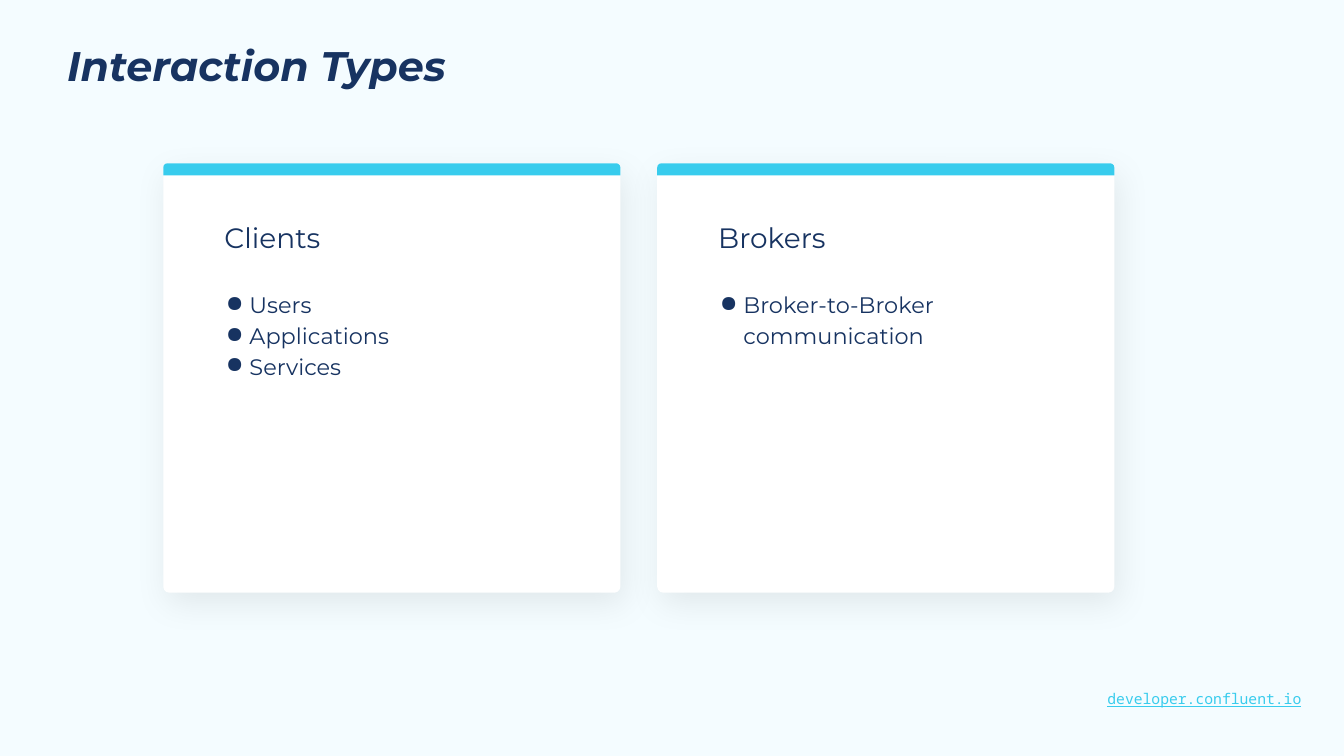
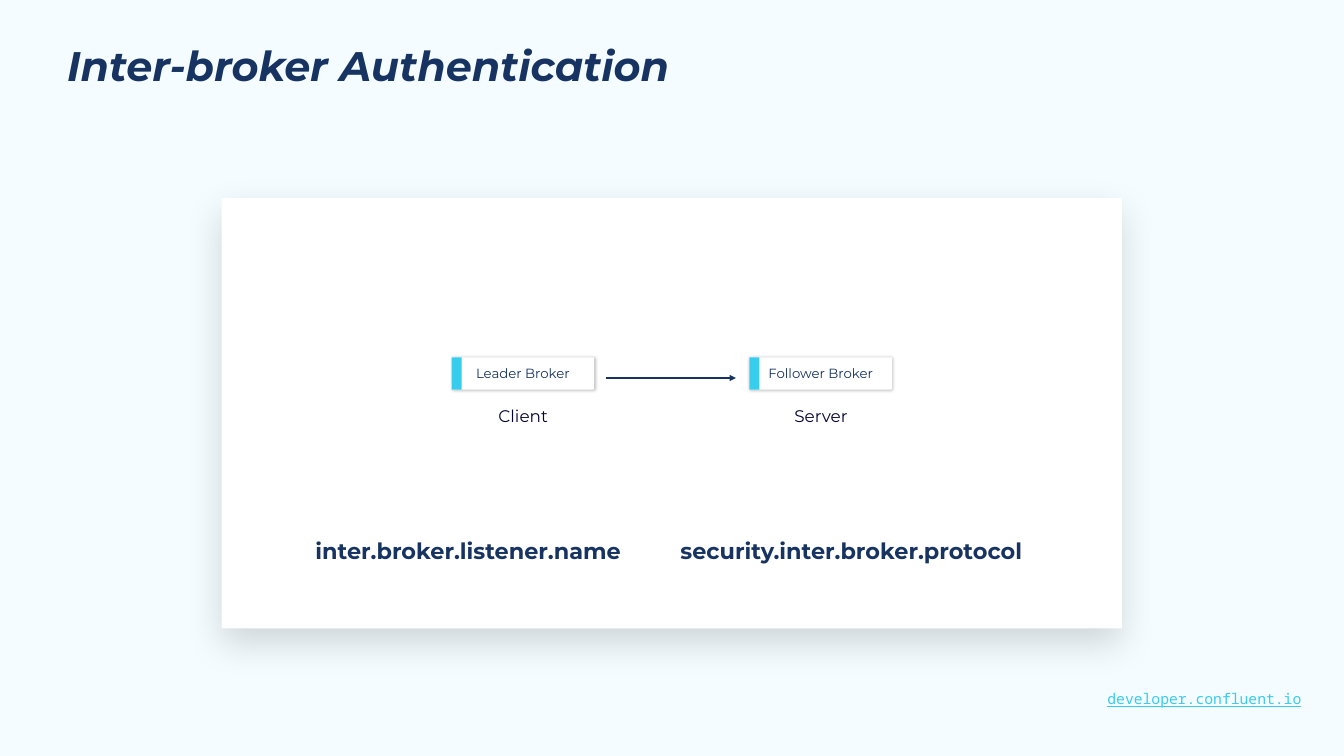
from dataclasses import dataclass
from typing import Any, NamedTuple

from lxml import etree
from pptx import Presentation
from pptx import util as u
from pptx.dml.color import RGBColor
from pptx.enum import shapes, text
from pptx.oxml import ns

# Shared look
NAVY = RGBColor(0x17, 0x33, 0x61)
INK = RGBColor(0x04, 0x05, 0x31)
CYAN = RGBColor(0x38, 0xCC, 0xED)
WHITE = RGBColor(0xFF, 0xFF, 0xFF)
SHADE = RGBColor(0x00, 0x00, 0x00)
PALE = RGBColor(0xF4, 0xFC, 0xFF)
SANS, MONO = "Montserrat", "Noto Sans Mono"
RECT = shapes.MSO_SHAPE.RECTANGLE
ROUND = shapes.MSO_SHAPE.ROUNDED_RECTANGLE
ROUND_TOP = shapes.MSO_SHAPE.ROUND_2_SAME_RECTANGLE
LEFT, CENTER, RIGHT = text.PP_ALIGN.LEFT, text.PP_ALIGN.CENTER, text.PP_ALIGN.RIGHT


class Area(NamedTuple):
    left: float
    top: float
    width: float
    height: float

    def lengths(self) -> list[u.Length]:
        return [u.Pt(value) for value in self]


class Shadow(NamedTuple):
    opacity: int
    blur: float
    distance: float
    angle: int


@dataclass(frozen=True)
class Style:
    size: float
    color: RGBColor = NAVY
    name: str = SANS
    bold: bool = False
    italic: bool = False
    underline: bool = False
    align: Any = LEFT
    spacing: float = 1.0
    insets: tuple[float, float, float, float] = (0, 0, 7.2, 7.2)
    bullet: str = ""


class Card(NamedTuple):
    heading: str
    items: list[str]


class Broker(NamedTuple):
    left: float
    label: str
    role: str


class Setting(NamedTuple):
    left: float
    width: float
    name: str


EVEN = (7.2, 7.2, 7.2, 7.2)
TITLE = Style(59, bold=True, italic=True, spacing=0.9, insets=(0, 9.6, 19.2, 9.6))
FOOTER = Style(21, CYAN, MONO, underline=True, align=RIGHT, insets=EVEN)
HEADING = Style(40)
ITEM = Style(32, spacing=1.15, bullet="●")
LABEL = Style(19, align=CENTER, insets=(19.2, 19.2, 19.2, 19.2))
ROLE = Style(24, INK, align=CENTER, insets=EVEN)
SETTING = Style(32, bold=True, spacing=1.15, insets=(0, 0, 9.6, 9.6))

CARD_SHADOW = Shadow(8, 48.4, 16.5, 68)
PANEL_SHADOW = Shadow(15, 52.9, 21, 91)
BROKER_SHADOW = Shadow(25, 4.5, 1.5, 52)


def add_child(parent: Any, tag: str, **attributes: Any) -> Any:
    values = {key: str(value) for key, value in attributes.items()}
    return etree.SubElement(parent, ns.qn(tag), values)


def write(frame: Any, lines: list[str], style: Style) -> None:
    """Fill a text frame with one paragraph per line."""
    frame.word_wrap = True
    for side, inset in zip(("left", "top", "right", "bottom"), style.insets):
        setattr(frame, f"margin_{side}", u.Pt(inset))
    for index, line in enumerate(lines):
        para = frame.paragraphs[0] if index == 0 else frame.add_paragraph()
        if style.bullet:
            properties = para._p.get_or_add_pPr()
            properties.set("marL", str(u.Pt(36)))
            properties.set("indent", str(u.Pt(-33.8)))
            color = add_child(properties, "a:buClr")
            add_child(color, "a:srgbClr", val=style.color)
            add_child(properties, "a:buChar", char=style.bullet)
        para.alignment = style.align
        para.line_spacing = style.spacing
        span = para.add_run()
        span.text = line
        span.font.color.rgb = style.color
        formats = {"size": u.Pt(style.size), "name": style.name, "bold": style.bold,
                   "italic": style.italic, "underline": style.underline}
        for key, value in formats.items():
            setattr(span.font, key, value)


def add_text(page: Any, area: Area, lines: list[str], style: Style) -> Any:
    box = page.shapes.add_textbox(*area.lengths())
    write(box.text_frame, lines, style)
    return box


def add_block(page: Any, kind: Any, area: Area, fill: RGBColor,
              corners: tuple[float, ...] = (), shadow: Shadow | None = None) -> Any:
    """Add a borderless filled shape, with a soft shadow if given."""
    block = page.shapes.add_shape(kind, *area.lengths())
    block.fill.solid()
    block.fill.fore_color.rgb = fill
    block.line.fill.background()
    block.shadow.inherit = False
    for index, corner in enumerate(corners):
        block.adjustments[index] = corner
    if shadow:
        effects = block._element.spPr.find(ns.qn("a:effectLst"))
        outer = add_child(effects, "a:outerShdw", blurRad=u.Pt(shadow.blur),
                          dist=u.Pt(shadow.distance), dir=shadow.angle * 60000,
                          algn="bl", rotWithShape=0)
        color = add_child(outer, "a:srgbClr", val=SHADE)
        add_child(color, "a:alpha", val=shadow.opacity * 1000)
    return block


def add_arrow(page: Any, start: float, end: float, level: float) -> None:
    arrow = page.shapes.add_connector(
        shapes.MSO_CONNECTOR.STRAIGHT, *(u.Pt(v) for v in (start, level, end, level)))
    arrow.line.color.rgb = NAVY
    arrow.line.width = u.Pt(3)
    add_child(arrow.line._get_or_add_ln(), "a:tailEnd", type="triangle")
    add_child(arrow._element.spPr, "a:effectLst")


def add_page(deck: Any, title: str) -> Any:
    """Start a slide with the common background, footer and title."""
    page = deck.slides.add_slide(deck.slide_layouts[6])
    page.background.fill.solid()
    page.background.fill.fore_color.rgb = PALE
    footer = add_text(page, Area(1302.5, 977.8, 563.8, 40.3),
                      ["developer.confluent.io"], FOOTER)
    footer.text_frame.auto_size = text.MSO_AUTO_SIZE.SHAPE_TO_FIT_TEXT
    add_text(page, Area(95.8, 55.4, 1633, 89.3), [title], TITLE)
    return page


def add_card(page: Any, left: float, card: Card) -> None:
    top, width = 233.3, 653
    add_block(page, ROUND, Area(left, top, width, 613.4), WHITE, (0.014,), CARD_SHADOW)
    add_block(page, ROUND_TOP, Area(left, top, width, 17.3), CYAN, (0.343, 0))
    inner = left + 87.1
    add_text(page, Area(inner, 315.4, 478.8, 64.8), [card.heading], HEADING)
    add_text(page, Area(inner, 410.4, 478.8, 375.1), card.items, ITEM)


def add_broker(page: Any, broker: Broker) -> None:
    top, height = 510.5, 46.1
    block = add_block(page, ROUND, Area(broker.left, top, 203.8, height), WHITE,
                      (0.042,), BROKER_SHADOW)
    write(block.text_frame, [broker.label], LABEL)
    block.text_frame.vertical_anchor = text.MSO_ANCHOR.MIDDLE
    add_block(page, ROUND, Area(broker.left, top, 14.4, height), CYAN, (0,))
    add_text(page, Area(broker.left + 17.3, 571.7, 169.9, 38.2), [broker.role], ROLE)


def build_interactions(deck: Any) -> None:
    page = add_page(deck, "Interaction Types")
    cards = [Card("Clients", ["Users", "Applications", "Services"]),
             Card("Brokers", ["Broker-to-Broker communication"])]
    for index, card in enumerate(cards):
        add_card(page, 233.3 + index * 705.6, card)


def build_authentication(deck: Any) -> None:
    page = add_page(deck, "Inter-broker Authentication")
    add_block(page, RECT, Area(316.8, 283, 1285.9, 614.9), WHITE, shadow=PANEL_SHADOW)
    # Broker pair
    for broker in (Broker(645.1, "Leader Broker", "Client"),
                   Broker(1070.6, "Follower Broker", "Server")):
        add_broker(page, broker)
    add_arrow(page, 866.2, 1051.2, 540)
    # Configuration settings
    for setting in (Setting(450.7, 452.2, "inter.broker.listener.name"),
                    Setting(972, 501.1, "security.inter.broker.protocol")):
        add_text(page, Area(setting.left, 761.8, setting.width, 59.8),
                 [setting.name], SETTING)


def main() -> None:
    deck = Presentation()
    deck.slide_width, deck.slide_height = u.Pt(1920), u.Pt(1080)
    build_interactions(deck)
    build_authentication(deck)
    deck.save("out.pptx")


if __name__ == "__main__":
    main()
